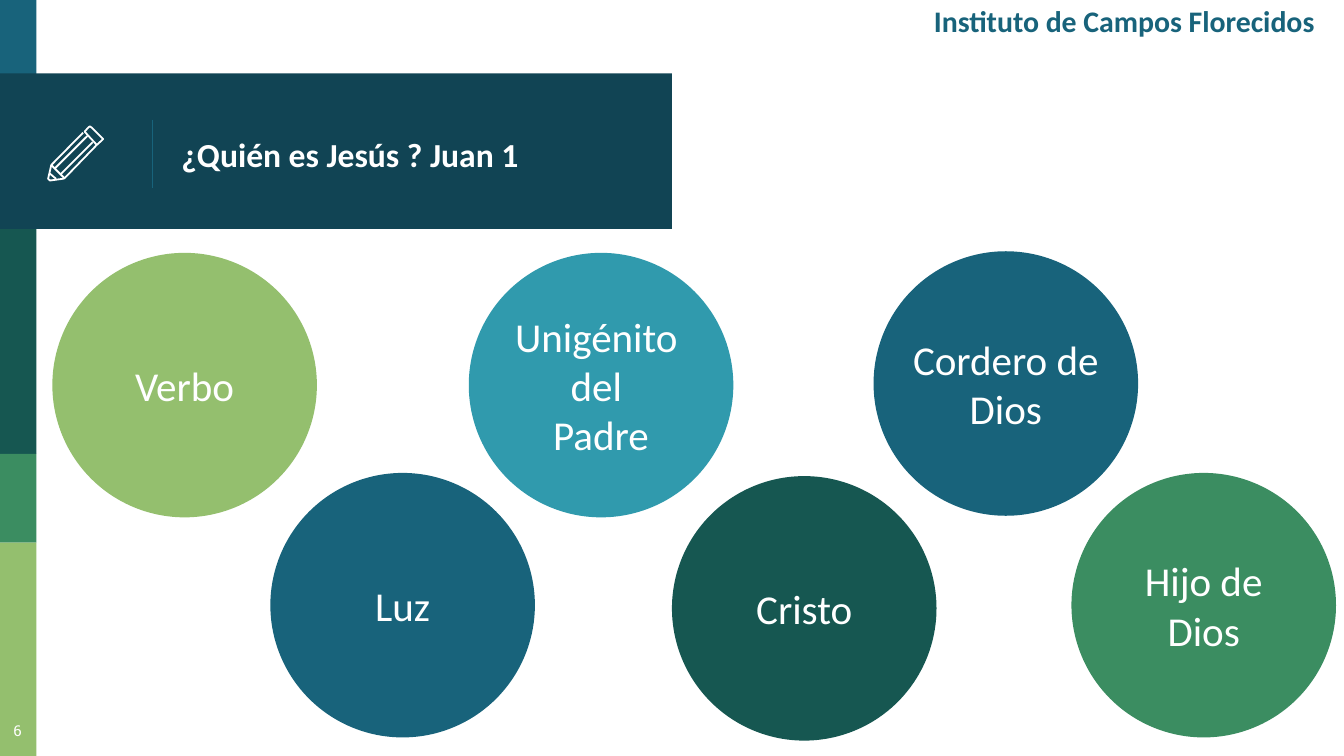
"""Build the slide of seven names for Jesus in John 1."""
from dataclasses import dataclass

from lxml.etree import SubElement
from pptx import Presentation
from pptx.dml.color import RGBColor
from pptx.enum.shapes import MSO_CONNECTOR, MSO_SHAPE
from pptx.enum.text import MSO_ANCHOR, PP_ALIGN
from pptx.oxml.ns import qn
from pptx.util import Cm, Pt


@dataclass(frozen=True)
class Theme:
    white: str = "FFFFFF"
    navy: str = "114454"
    blue: str = "18637B"
    aqua: str = "309AAD"
    pine: str = "165751"
    green: str = "3B8D61"
    lime: str = "94BF6E"
    font: str = "Calibri"
    slab: str = "Roboto Slab"
    title: int = 18
    head: int = 16
    label: int = 22
    number: int = 8
    thin: float = 0.75
    stroke: float = 0.96


THEME = Theme()
CIRCLE = 5


def paint(shape, color):
    shape.shadow.inherit = False
    shape.fill.solid()
    shape.fill.fore_color.rgb = RGBColor.from_string(color)
    shape.line.fill.background()


def write(shape, text, size, color=THEME.white, font=THEME.font, bold=False,
          align=PP_ALIGN.CENTER, anchor=MSO_ANCHOR.MIDDLE, inset=0.25):
    frame = shape.text_frame
    frame.word_wrap = True
    frame.vertical_anchor = anchor
    frame.margin_left = frame.margin_right = Cm(inset)
    frame.margin_top = frame.margin_bottom = Cm(inset / 2)
    line = frame.paragraphs[0]
    line.text = text
    line.alignment = align
    line.font.name = font
    line.font.size = Pt(size)
    line.font.bold = bold
    line.font.color.rgb = RGBColor.from_string(color)


def add_bar(slide, top, width, height, color):
    bar = slide.shapes.add_shape(
        MSO_SHAPE.RECTANGLE, 0, Cm(top), Cm(width), Cm(height))
    paint(bar, color)


def add_circle(slide, left, top, color, text):
    circle = slide.shapes.add_shape(
        MSO_SHAPE.OVAL, Cm(left), Cm(top), Cm(CIRCLE), Cm(CIRCLE))
    paint(circle, color)
    write(circle, text, THEME.label, inset=0)


def add_text(slide, left, top, width, height, text, size, **style):
    box = slide.shapes.add_textbox(Cm(left), Cm(top), Cm(width), Cm(height))
    write(box, text, size, **style)


def add_line(slide, start, end, color, width):
    line = slide.shapes.add_connector(
        MSO_CONNECTOR.STRAIGHT, *(Cm(x) for x in start + end))
    line.line.color.rgb = RGBColor.from_string(color)
    line.line.width = Pt(width)
    SubElement(line._element.spPr, qn("a:effectLst"))


def add_path(slide, points, close):
    first, *rest = [(x * 100, y * 100) for x, y in points]
    maker = slide.shapes.build_freeform(*first, scale=Cm(0.01))
    maker.add_line_segments(rest, close=close)
    path = maker.convert_to_shape()
    path.shadow.inherit = False
    path.fill.background()
    path.line.color.rgb = RGBColor.from_string(THEME.white)
    path.line.width = Pt(THEME.stroke)


def add_pencil(slide):
    cap = [(1.93, 2.61), (1.73, 2.41), (1.7, 2.39), (1.67, 2.41),
           (1.6, 2.49), (1.83, 2.74), (1.93, 2.65), (1.95, 2.63)]
    body = [(1.57, 2.51), (0.97, 3.12), (0.91, 3.38), (0.94, 3.41),
            (0.97, 3.41), (1.19, 3.38), (1.22, 3.37), (1.83, 2.74)]
    add_path(slide, cap, True)
    add_path(slide, body, False)
    for start, end in [((1.75, 2.69), (1.14, 3.3)),
                       ((1.04, 3.18), (1.65, 2.57)),
                       ((1.06, 3.38), (0.94, 3.28)),
                       ((0.97, 3.12), (1.21, 3.36))]:
        add_line(slide, start, end, THEME.white, THEME.stroke)


def main():
    deck = Presentation()
    deck.slide_width, deck.slide_height = Cm(25.4), Cm(14.29)
    slide = deck.slides.add_slide(deck.slide_layouts[6])
    for top, width, height, color in [
            (0, 0.69, 1.47, THEME.blue),
            (1.39, 12.7, 2.94, THEME.navy),
            (4.33, 0.69, 4.25, THEME.pine),
            (8.58, 0.69, 1.68, THEME.green),
            (10.26, 0.69, 4.03, THEME.lime)]:
        add_bar(slide, top, width, height, color)
    add_line(slide, (2.88, 2.26), (2.88, 3.56), THEME.blue, THEME.thin)
    add_text(slide, 3.18, 1.5, 8.92, 2.84, "¿Quién es Jesús ? Juan 1",
             THEME.title, bold=True, align=PP_ALIGN.LEFT)
    add_pencil(slide)
    add_text(slide, -0.15, 13.35, 0.97, 0.9, "6", THEME.number,
             font=THEME.slab)
    for left, top, color, text in [
            (0.99, 4.78, THEME.lime, "Verbo"),
            (5.11, 8.94, THEME.blue, "Luz"),
            (8.86, 4.78, THEME.aqua, "Unigénito \ndel \nPadre"),
            (12.7, 9, THEME.pine, "Cristo"),
            (16.51, 4.75, THEME.blue, "Cordero de Dios"),
            (20.25, 8.94, THEME.green, "Hijo de Dios")]:
        add_circle(slide, left, top, color, text)
    add_text(slide, 15.7, -0.08, 9.4, 1.55, "Instituto de Campos Florecidos",
             THEME.head, color=THEME.blue, bold=True, align=PP_ALIGN.RIGHT,
             anchor=MSO_ANCHOR.TOP)
    deck.save("out.pptx")


if __name__ == "__main__":
    main()
